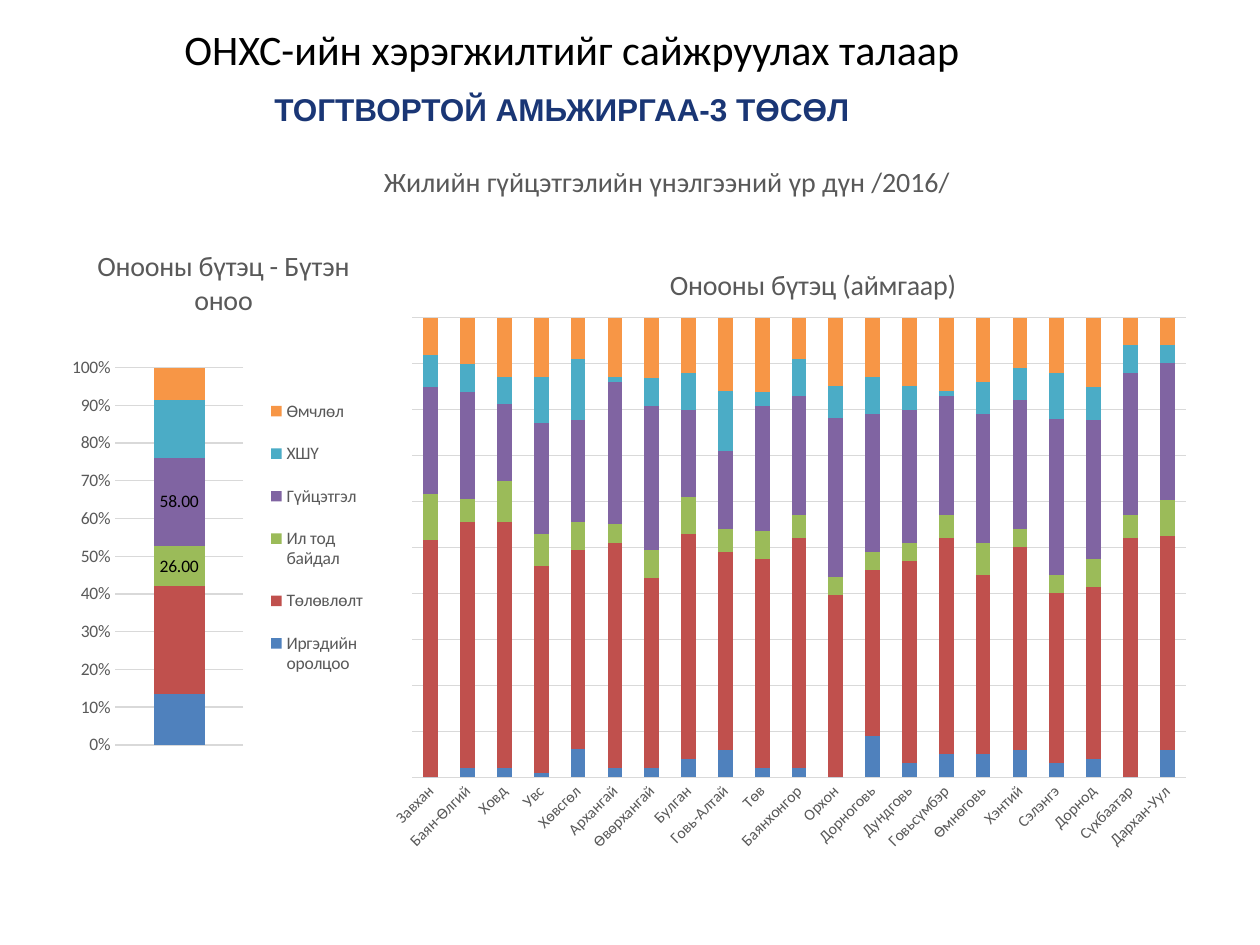
from pptx import Presentation
from pptx.chart.data import CategoryChartData
from pptx.dml.color import RGBColor
from pptx.enum.chart import (XL_CHART_TYPE as CT, XL_LABEL_POSITION as LABEL_POS,
                             XL_LEGEND_POSITION as LEGEND_POS, XL_TICK_MARK as TICK)
from pptx.enum.text import MSO_ANCHOR as ANCHOR, PP_ALIGN as ALIGN
from pptx.oxml import parse_xml
from pptx.oxml.ns import nsdecls, qn
from pptx.util import Pt

PX = 914400 / 126
BLACK = RGBColor(0x00, 0x00, 0x00)
GREY = RGBColor(0x59, 0x59, 0x59)
GRID = RGBColor(0xD9, 0xD9, 0xD9)
NAVY = RGBColor(0x1A, 0x36, 0x75)
SERIES_COLORS = [RGBColor.from_string(c) for c in
                 ("4F81BD", "C0504D", "9BBB59", "8064A2", "4BACC6", "F79646")]

# Text: wording, box in px, wrap, alignment, format
TEXTS = [
    ("ОНХС-ийн хэрэгжилтийг сайжруулах талаар", (63, 10, 1018, 78), True, ALIGN.CENTER,
     dict(name="Calibri", size=Pt(24), color=BLACK)),
    ("Жилийн гүйцэтгэлийн үнэлгээний үр дүн /2016/", (242, 158, 850, 47), True, ALIGN.CENTER,
     dict(name="Calibri", size=Pt(16), color=GREY)),
    ("ТОГТВОРТОЙ АМЬЖИРГАА-3 ТӨСӨЛ", (262, 84, 607, 50), False, ALIGN.LEFT,
     dict(name="Arial", size=Pt(18), color=NAVY, bold=True)),
]

# Full score by component
FULL_SCORE = [("Иргэдийн оролцоо", [33]), ("Төлөвлөлт", [71]), ("Ил тод байдал", [26]),
              ("Гүйцэтгэл", [58]), ("ХШҮ", [38]), ("Өмчлөл", [21])]
LABELLED = ("Ил тод байдал", "Гүйцэтгэл")

# Score by province
PROVINCES = ["Завхан", "Баян-Өлгий", "Ховд", "Увс", "Хөвсгөл", "Архангай", "Өвөрхангай",
             "Булган", "Говь-Алтай", "Төв", "Баянхонгор", "Орхон", "Дорноговь", "Дундговь",
             "Говьсүмбэр", "Өмнөговь", "Хэнтий", "Сэлэнгэ", "Дорнод", "Сүхбаатар",
             "Дархан-Уул"]
PROVINCE_VALUES = [
    [0, 2, 2, 1, 6, 2, 2, 4, 6, 2, 2, 0, 9, 3, 5, 5, 6, 3, 4, 0, 6],
    [51, 53, 54, 45, 43, 49, 41, 49, 43, 45, 50, 40, 36, 44, 47, 39, 44, 37, 37, 52, 47],
    [10, 5, 9, 7, 6, 4, 6, 8, 5, 6, 5, 4, 4, 4, 5, 7, 4, 4, 6, 5, 8],
    [23, 23, 17, 24, 22, 31, 31, 19, 17, 27, 26, 35, 30, 29, 26, 28, 28, 34, 30, 31, 30],
    [7, 6, 6, 10, 13, 1, 6, 8, 13, 3, 8, 7, 8, 5, 1, 7, 7, 10, 7, 6, 4],
    [8, 10, 13, 13, 9, 13, 13, 12, 16, 16, 9, 15, 13, 15, 16, 14, 11, 12, 15, 6, 6],
]
PROVINCE_SCORE = [(f"Series {i}", vals) for i, vals in enumerate(PROVINCE_VALUES, 1)]


def emu(box):
    return [round(v * PX) for v in box]


def set_font(font, **fmt):
    for key, value in fmt.items():
        if key == "color":
            font.color.rgb = value
        else:
            setattr(font, key, value)


def set_layout(parent, index, x, y, w=None, h=None, inner=False):
    """Give a chart part a manual place, in fractions of the chart."""
    for old in parent.findall(qn("c:layout")):
        parent.remove(old)
    target = '<c:layoutTarget val="inner"/>' if inner else ""
    modes = '<c:xMode val="edge"/><c:yMode val="edge"/>'
    sizes = "".join(f'<c:{k} val="{v}"/>' for k, v in zip("xywh", (x, y, w, h))
                    if v is not None)
    parent.insert(index, parse_xml(f'<c:layout {nsdecls("c")}><c:manualLayout>{target}{modes}'
                                   f'{sizes}</c:manualLayout></c:layout>'))


def add_text(slide, text, box, wrap, align, fmt):
    tf = slide.shapes.add_textbox(*emu(box)).text_frame
    tf.word_wrap = wrap
    tf.vertical_anchor = ANCHOR.MIDDLE
    p = tf.paragraphs[0]
    p.alignment = align
    r = p.add_run()
    r.text = text
    set_font(r.font, **fmt)


def add_stack(slide, box, title, title_at, plot, cats, series):
    data = CategoryChartData(number_format="0.00")
    data.categories = cats
    for name, vals in series:
        data.add_series(name, vals)
    chart = slide.shapes.add_chart(CT.COLUMN_STACKED_100, *emu(box), data).chart
    set_font(chart.font, name="Calibri", size=Pt(10), color=BLACK)
    chart.has_legend = False

    # Title and plot area
    chart.has_title = True
    tf = chart.chart_title.text_frame
    tf.text = title
    set_font(tf.paragraphs[0].runs[0].font, name="Calibri", size=Pt(16), bold=False, color=GREY)
    set_layout(chart.chart_title._element, 1, *title_at)
    set_layout(chart._chartSpace.chart.plotArea, 0, *plot, inner=True)

    # Columns
    bars = chart.plots[0]
    bars.gap_width, bars.overlap, bars.vary_by_categories = 150, 100, False
    for s, color in zip(bars.series, SERIES_COLORS):
        s.format.fill.solid()
        s.format.fill.fore_color.rgb = color

    # Axes
    for axis, size in ((chart.category_axis, 9), (chart.value_axis, 10)):
        axis.major_tick_mark = axis.minor_tick_mark = TICK.NONE
        set_font(axis.tick_labels.font, name="Calibri", size=Pt(size), color=GREY)
    value = chart.value_axis
    value.has_major_gridlines = True
    value.tick_labels.number_format = "0%"
    value.tick_labels.number_format_is_linked = False
    value.format.line.fill.background()
    for line in (value.major_gridlines.format.line, chart.category_axis.format.line):
        line.color.rgb = GRID
        line.width = Pt(0.75)
    return chart


prs = Presentation()
prs.slide_width, prs.slide_height = emu((1260, 945))
slide = prs.slides.add_slide(prs.slide_layouts[6])

# Full score, with legend and two labelled parts
full = add_stack(slide, (53, 220, 328, 547), "Онооны бүтэц - Бүтэн оноо", (0.12, 0.04),
                 (0.19, 0.27, 0.39, 0.69), ["1"], FULL_SCORE)
full.category_axis.visible = False
full.has_legend = True
legend = full.legend
legend.position = LEGEND_POS.RIGHT
legend.include_in_layout = False
set_font(legend.font, name="Calibri", size=Pt(10), color=GREY)
set_layout(legend._element, 1, 0.64, 0.29, 0.33, 0.58)
for s in full.plots[0].series:
    if s.name in LABELLED:
        labels = s.data_labels
        labels.show_value = True
        labels.number_format, labels.number_format_is_linked = "0.00", False
        labels.position = LABEL_POS.CENTER
        set_font(labels.font, name="Calibri", size=Pt(10), color=BLACK)

# Score by province
by_province = add_stack(slide, (388, 242, 814, 630), "Онооны бүтэц (аймгаар)", (0.34, 0.03),
                        (0.03, 0.12, 0.95, 0.73), PROVINCES, PROVINCE_SCORE)
by_province.value_axis.visible = False
by_province.category_axis._element.txPr.bodyPr.set("rot", "-2700000")

# Headings
for item in TEXTS:
    add_text(slide, *item)

prs.save("out.pptx")
